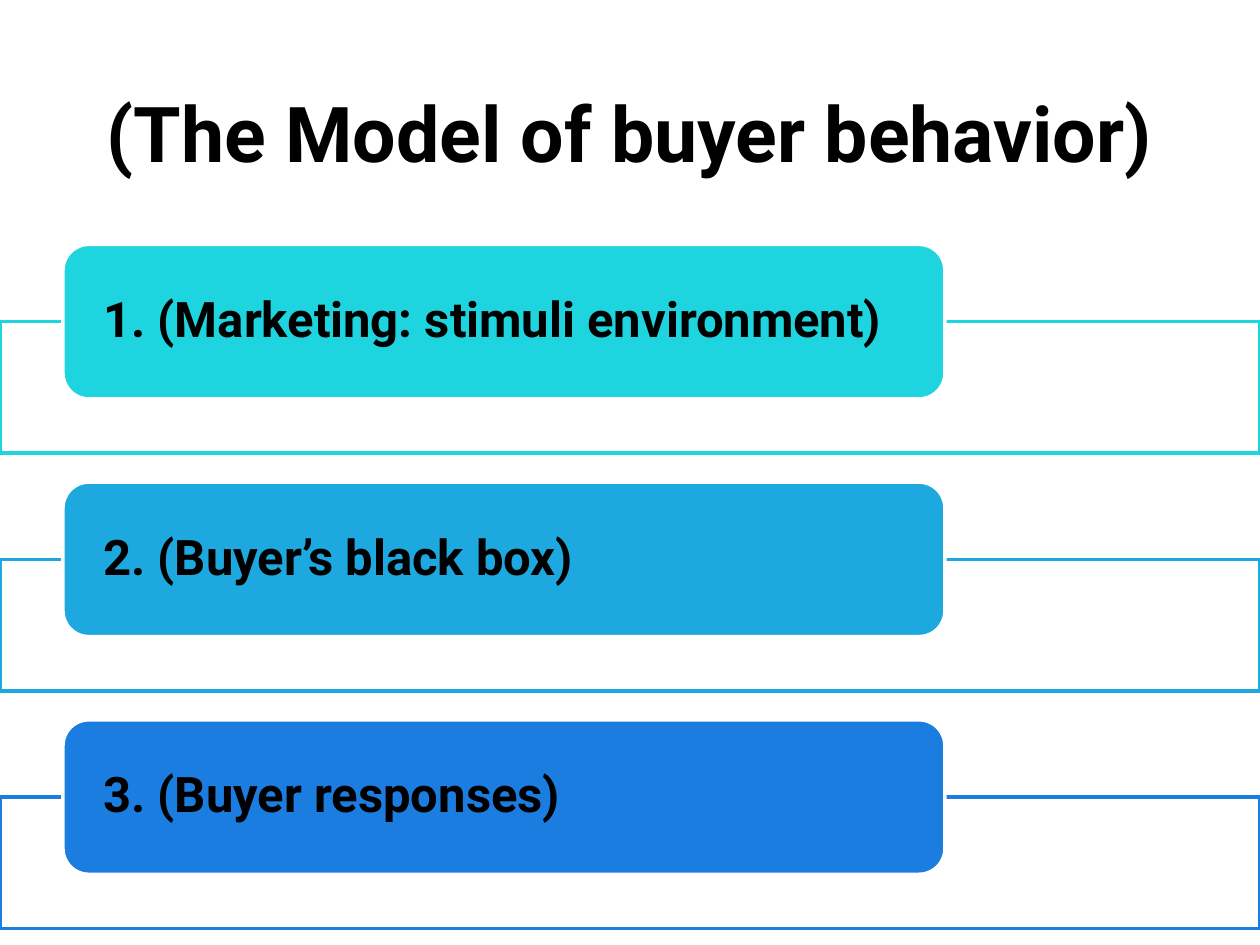
from pptx import Presentation
from pptx import util as u
from pptx.dml.color import RGBColor
from pptx.enum import shapes, text

BLACK = RGBColor(0x00, 0x00, 0x00)
WHITE = RGBColor(0xFF, 0xFF, 0xFF)
TURQUOISE = RGBColor(0x1E, 0xD4, 0xDE)
SKY = RGBColor(0x1D, 0xA9, 0xDF)
BLUE = RGBColor(0x1C, 0x7D, 0xE1)
FONT = "Roboto"

STAGES = [
    ("1. (Marketing: stimuli environment)", TURQUOISE),
    ("2. (Buyer’s black box)", SKY),
    ("3. (Buyer responses)", BLUE),
]


def add_text(tf, words, size, align):
    tf.word_wrap = True
    tf.vertical_anchor = text.MSO_ANCHOR.MIDDLE
    p = tf.paragraphs[0]
    p.alignment = align
    r = p.add_run()
    r.text = words
    r.font.name = FONT
    r.font.size = u.Pt(size)
    r.font.bold = True
    r.font.color.rgb = BLACK
    return p


def add_box(s, kind, box, fill, line):
    sp = s.shapes.add_shape(kind, *(u.Inches(v) for v in box))
    sp.shadow.inherit = False
    sp.fill.solid()
    sp.fill.fore_color.rgb = fill
    sp.line.color.rgb = line
    sp.line.width = u.Pt(2)
    return sp


def add_title(s, box, words):
    sp = s.shapes.add_textbox(*(u.Inches(v) for v in box))
    add_text(sp.text_frame, words, 44, text.PP_ALIGN.CENTER)


def add_stage(s, box, words, color):
    left, top, width, height = box
    label_h = 0.74 * height
    frame_top = 0.37 * height

    # Outlined frame behind the label
    add_box(s, shapes.MSO_SHAPE.RECTANGLE,
            (left, top + frame_top, width, height - frame_top), WHITE, color)

    # Rounded label
    sp = add_box(s, shapes.MSO_SHAPE.ROUNDED_RECTANGLE,
                 (left + 0.05 * width, top, 0.7 * width, label_h), color, WHITE)
    tf = sp.text_frame
    tf.margin_left = tf.margin_right = u.Inches(0.26)
    tf.margin_top = tf.margin_bottom = 0
    p = add_text(tf, words, 28, text.PP_ALIGN.LEFT)
    p.line_spacing = 0.9


def add_stages(s, box, stages):
    left, top, width, height = box
    gap = 0.23
    row_h = (height - gap * (len(stages) - 1)) / len(stages)
    for i, (words, color) in enumerate(stages):
        add_stage(s, (left, top + i * (row_h + gap), width, row_h), words, color)


def main():
    prs = Presentation()
    prs.slide_width, prs.slide_height = u.Inches(10), u.Inches(7.5)
    s = prs.slides.add_slide(prs.slide_layouts[6])
    add_title(s, (0, 0.4, 10, 1.29), "(The Model of buyer behavior)")
    add_stages(s, (0, 1.94, 10, 5.43), STAGES)
    prs.save("out.pptx")


if __name__ == "__main__":
    main()
